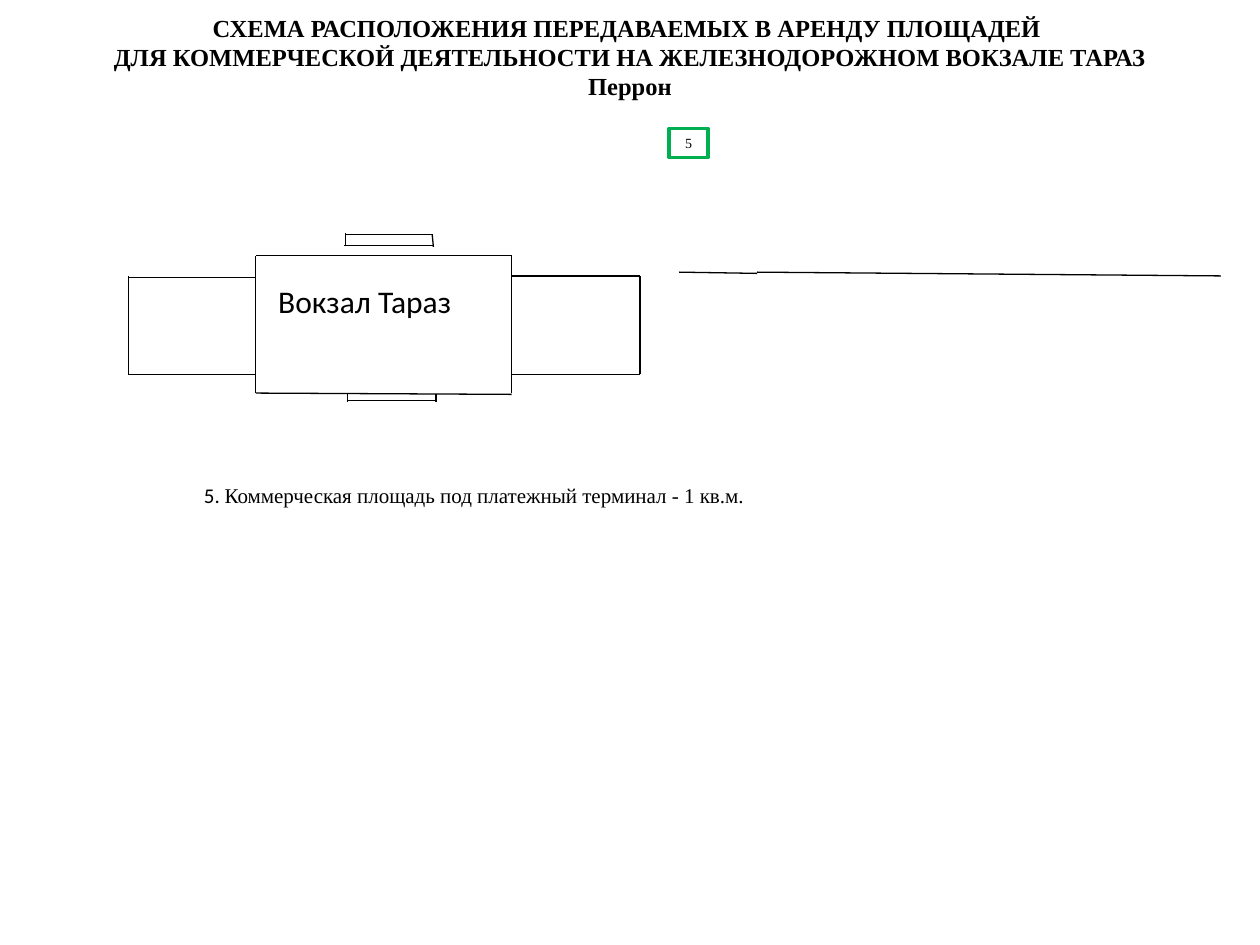
from lxml import etree
from pptx import Presentation, util as u
from pptx.dml.color import RGBColor
from pptx.enum import shapes, text
from pptx.oxml.ns import qn

COLORS = {"ink": "000000", "paper": "FFFFFF", "green": "00B050"}
SERIF, SANS = "Times New Roman", "Calibri"
TITLE = [
    "СХЕМА РАСПОЛОЖЕНИЯ ПЕРЕДАВАЕМЫХ В АРЕНДУ ПЛОЩАДЕЙ ",
    "ДЛЯ КОММЕРЧЕСКОЙ ДЕЯТЕЛЬНОСТИ НА ЖЕЛЕЗНОДОРОЖНОМ ВОКЗАЛЕ ТАРАЗ",
    "Перрон",
]
# Wall ends in inches: x1, y1, x2, y2
HALL = [
    (2.03, 2.03, 4.06, 2.03), (2.03, 2.03, 2.03, 3.12),
    (2.03, 3.12, 4.06, 3.13), (4.06, 2.03, 4.06, 3.12),
]
WINGS = [
    (1.02, 2.2, 2.03, 2.2), (1.02, 2.19, 1.02, 2.97), (2.03, 2.97, 1.02, 2.97),
    (4.06, 2.19, 5.08, 2.19), (5.08, 2.19, 5.08, 2.97), (5.08, 2.97, 4.06, 2.97),
]
PORCHES = [
    (2.74, 1.86, 3.44, 1.86), (3.43, 1.86, 3.44, 1.96),
    (2.73, 1.95, 3.44, 1.95), (2.74, 1.85, 2.74, 1.95),
    (2.75, 3.18, 3.45, 3.18), (2.76, 3.13, 2.76, 3.19), (3.46, 3.13, 3.46, 3.19),
]
FENCE = [(5.39, 2.16, 6.01, 2.17), (6.01, 2.16, 9.69, 2.19)]


def color(name):
    return RGBColor.from_string(COLORS[name])


def add_run(para, words, font, size, bold=False):
    run = para.add_run()
    run.text = words
    run.font.name, run.font.size, run.font.bold = font, u.Pt(size), bold
    run.font.color.rgb = color("ink")


def add_wall(slide, ends):
    line = slide.shapes.add_connector(
        shapes.MSO_CONNECTOR.STRAIGHT, *[u.Inches(v) for v in ends])
    line.line.color.rgb = color("ink")
    line.line.width = u.Pt(0.75)
    etree.SubElement(line._element.spPr, qn("a:effectLst"))


def add_label(slide, area, runs):
    """Add a one-line text box from (words, font, size) runs."""
    box = slide.shapes.add_textbox(*[u.Inches(v) for v in area])
    box.text_frame.word_wrap = True
    for run in runs:
        add_run(box.text_frame.paragraphs[0], *run)


def add_spot(slide, area, words):
    """Add a green-edged box for a rented spot."""
    spot = slide.shapes.add_shape(
        shapes.MSO_SHAPE.RECTANGLE, *[u.Inches(v) for v in area])
    spot.shadow.inherit = False
    spot.fill.solid()
    spot.fill.fore_color.rgb = color("paper")
    spot.line.color.rgb = color("green")
    spot.line.width = u.Pt(2)
    frame = spot.text_frame
    frame.vertical_anchor = text.MSO_ANCHOR.MIDDLE
    para = frame.paragraphs[0]
    para.alignment = text.PP_ALIGN.CENTER
    add_run(para, words, SERIF, 8)


def set_title(slide):
    title = slide.shapes.title
    title.left, title.top = u.Inches(0), u.Inches(0.05)
    title.width, title.height = u.Inches(10), u.Inches(0.81)
    frame = title.text_frame
    frame.auto_size = text.MSO_AUTO_SIZE.NONE
    frame.vertical_anchor = text.MSO_ANCHOR.TOP
    for i, words in enumerate(TITLE):
        para = frame.add_paragraph() if i else frame.paragraphs[0]
        para.alignment = text.PP_ALIGN.CENTER
        add_run(para, words, SERIF, 14, True)


def main():
    deck = Presentation()
    deck.slide_width, deck.slide_height = u.Inches(10), u.Inches(7.5)
    slide = deck.slides.add_slide(deck.slide_layouts[5])
    set_title(slide)
    for ends in HALL + WINGS + PORCHES + FENCE:
        add_wall(slide, ends)
    add_label(slide, (2.11, 2.19, 2.03, 0.4), [("Вокзал Тараз", SANS, 18)])
    add_label(slide, (1.52, 3.78, 5.66, 0.3), [
        ("5. ", SANS, 12),
        ("Коммерческая площадь под платежный терминал - 1 кв.м.", SERIF, 12),
    ])
    add_spot(slide, (5.31, 1.02, 0.31, 0.23), "5")
    deck.save("out.pptx")


if __name__ == "__main__":
    main()
